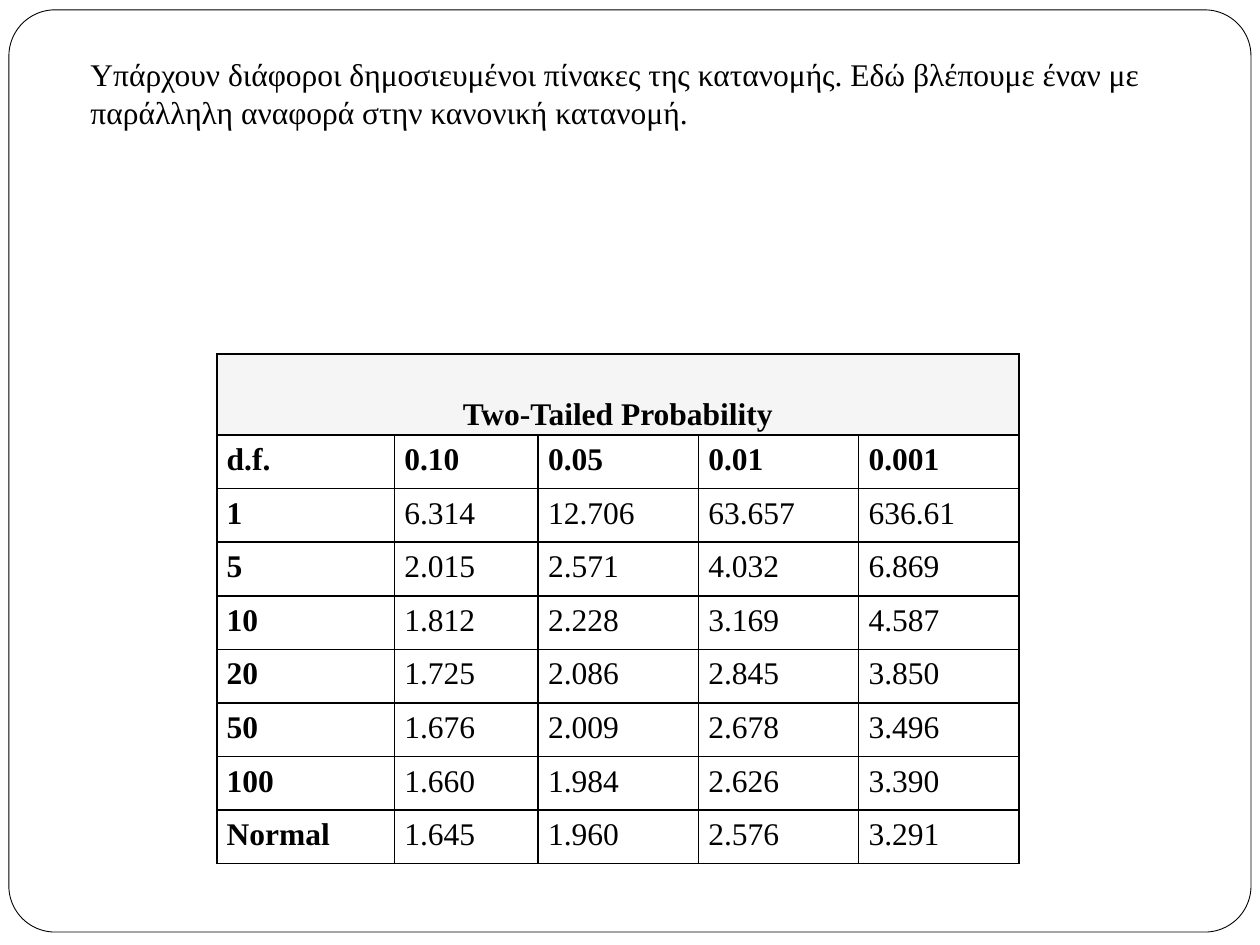
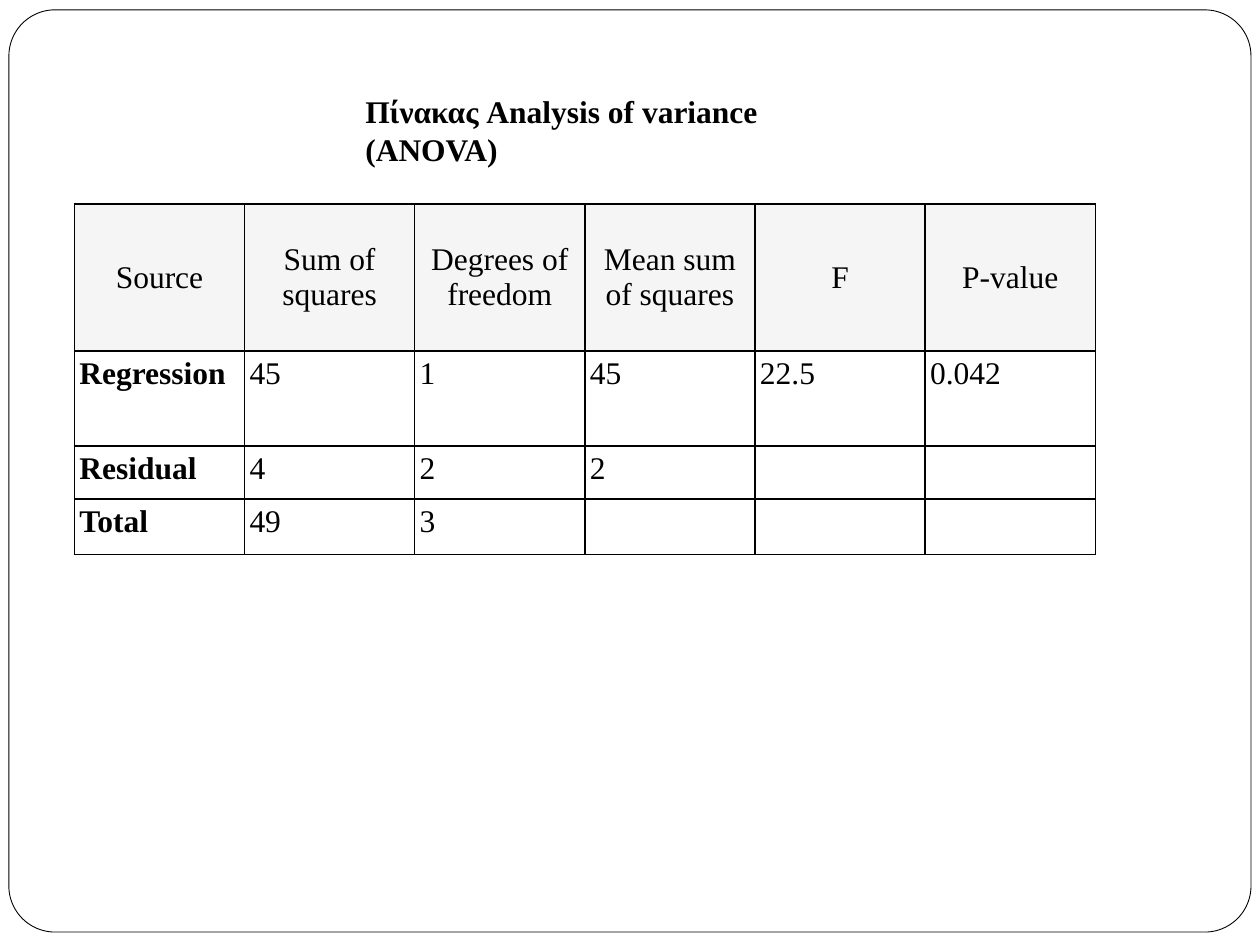
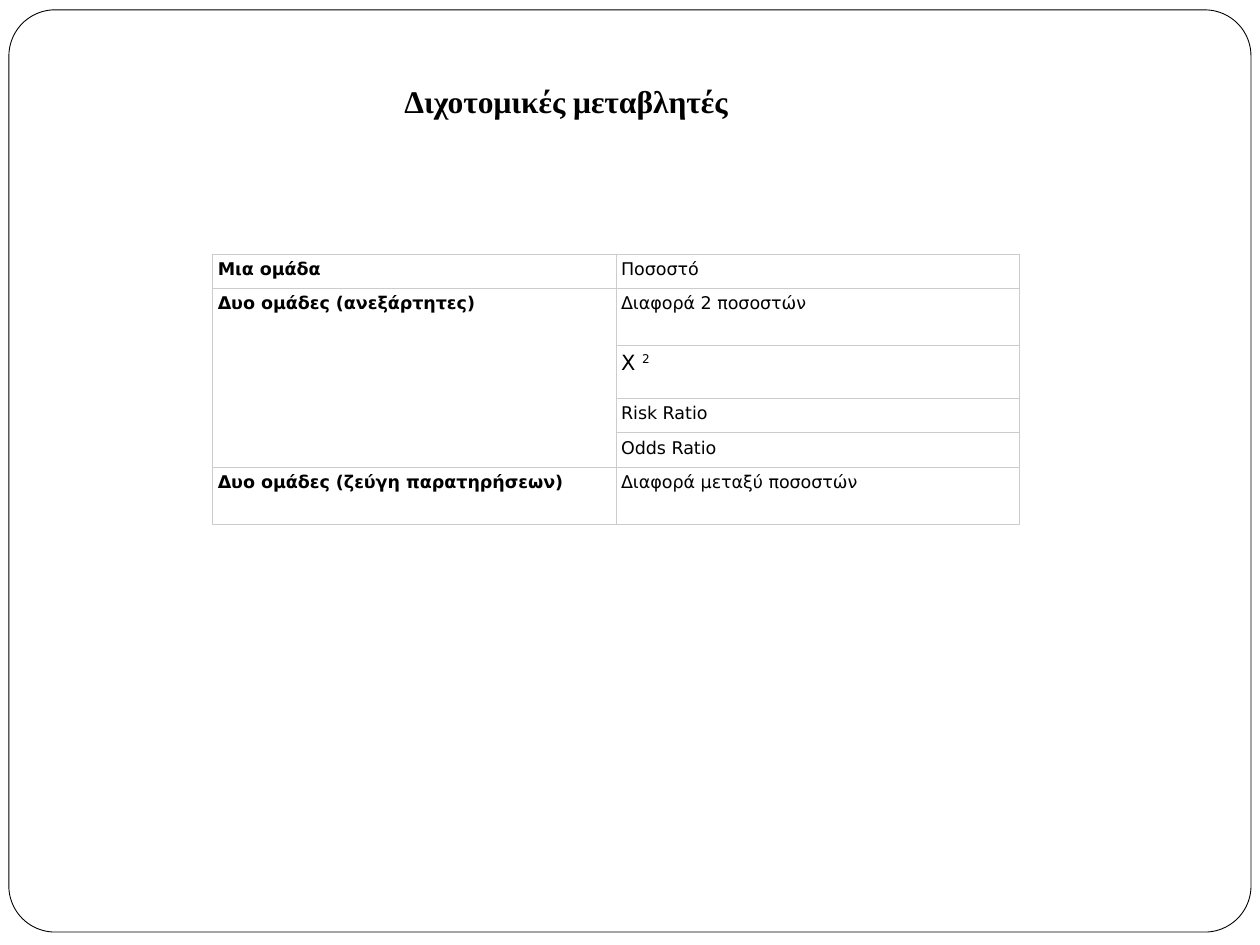
from lxml.etree import SubElement
from pptx import Presentation
from pptx.dml.color import RGBColor
from pptx.enum.shapes import MSO_SHAPE
from pptx.enum.text import MSO_ANCHOR as Anchor, MSO_AUTO_SIZE, PP_ALIGN as Align
from pptx.oxml.ns import qn
from pptx.util import Cm, Pt

COLORS = {"ink": "000000", "paper": "FFFFFF", "header": "F5F5F5", "rule": "CCCCCC"}
SERIF, SANS = "Times New Roman", "DejaVu Sans"
FRAME_BOX = (0.18, 0.2, 25.04, 18.59)
TITLE_ONLY = 5

T_VALUES = [
    ["Two-Tailed Probability", "", "", "", ""],
    ["d.f.", "0.10", "0.05", "0.01", "0.001"],
    ["1", "6.314", "12.706", "63.657", "636.61"],
    ["5", "2.015", "2.571", "4.032", "6.869"],
    ["10", "1.812", "2.228", "3.169", "4.587"],
    ["20", "1.725", "2.086", "2.845", "3.850"],
    ["50", "1.676", "2.009", "2.678", "3.496"],
    ["100", "1.660", "1.984", "2.626", "3.390"],
    ["Normal", "1.645", "1.960", "2.576", "3.291"],
]
ANOVA = [
    ["Source", "Sum of squares", "Degrees of freedom", "Mean sum of squares", "F", "P-value"],
    ["Regression", "45", "1", "45", "22.5", "0.042"],
    ["Residual", "4", "2", "2", "", ""],
    ["Total", "49", "3", "", "", ""],
]
BINARY_METHODS = [
    ["Μια ομάδα", "Ποσοστό"],
    ["Δυο ομάδες (ανεξάρτητες)", "Διαφορά 2 ποσοστών"],
    ["", "Χ ^2"],
    ["", "Risk Ratio"],
    ["", "Odds Ratio"],
    ["Δυο ομάδες (ζεύγη παρατηρήσεων)", "Διαφορά μεταξύ ποσοστών"],
]


def color(key):
    """Return the named colour."""
    return RGBColor.from_string(COLORS[key])


def write_text(frame, text, size=18, font=SERIF, bold=False, align=Align.LEFT):
    """Write one formatted paragraph; what follows ^ is raised."""
    paragraph = frame.paragraphs[0]
    paragraph.alignment = align
    for level, part in enumerate(text.split("^")):
        if not part:
            continue
        run = paragraph.add_run()
        run.text = part
        run.font.size, run.font.name, run.font.bold = Pt(size), font, bold
        run.font.color.rgb = color("ink")
        if level:
            run.font._element.set("baseline", "30000")


def add_master_frame(slide, master, box):
    """Put the rounded page frame behind everything on the master."""
    frame = slide.shapes.add_shape(MSO_SHAPE.ROUNDED_RECTANGLE, *map(Cm, box))
    frame.adjustments[0] = 0.05
    frame.shadow.inherit = False
    frame.fill.solid()
    frame.fill.fore_color.rgb = color("paper")
    frame.line.color.rgb = color("ink")
    frame.line.width = Pt(0.5)
    frame.element.nvSpPr.cNvPr.set("id", "20")
    master.shapes.element.insert(2, frame.element)


def add_titled_slide(prs, title, box, bold=True):
    """Add a slide with its title placed in the box."""
    slide = prs.slides.add_slide(prs.slide_layouts[TITLE_ONLY])
    heading = slide.shapes.title
    heading.left, heading.top, heading.width, heading.height = map(Cm, box)
    frame = heading.text_frame
    frame.word_wrap = True
    frame.auto_size = MSO_AUTO_SIZE.NONE
    frame.vertical_anchor = Anchor.TOP
    write_text(frame, title, bold=bold)
    return slide


def set_borders(cell, key, width):
    """Draw all four borders of a cell."""
    properties = cell._tc.get_or_add_tcPr()
    for side in ("a:lnL", "a:lnR", "a:lnT", "a:lnB"):
        line = SubElement(properties, qn(side), w=str(Pt(width)))
        fill = SubElement(line, qn("a:solidFill"))
        SubElement(fill, qn("a:srgbClr"), val=COLORS[key])


def format_cell(cell, text, fill="paper", border=("ink", 1), margins=(0.1, 0.1),
                anchor=Anchor.TOP, **text_format):
    """Give a cell its borders, fill, margins and text."""
    set_borders(cell, *border)
    cell.fill.solid()
    cell.fill.fore_color.rgb = color(fill)
    cell.margin_left = cell.margin_right = Cm(margins[0])
    cell.margin_top = cell.margin_bottom = Cm(margins[1])
    cell.vertical_anchor = anchor
    write_text(cell.text_frame, text, **text_format)


def add_grid(slide, corner, widths, heights, rows, cell_format):
    """Add a table at the corner; cell_format gives the format by row and column."""
    left, top = corner
    box = map(Cm, (left, top, sum(widths), sum(heights)))
    table = slide.shapes.add_table(len(rows), len(widths), *box).table
    table.first_row = table.horz_banding = False
    for column, width in zip(table.columns, widths):
        column.width = Cm(width)
    for row, height in zip(table.rows, heights):
        row.height = Cm(height)
    for r, values in enumerate(rows):
        for c, value in enumerate(values):
            format_cell(table.cell(r, c), value, **cell_format(r, c))
    return table


def t_format(r, c):
    """Format the t distribution table."""
    if r == 0:
        return dict(fill="header", margins=(0.05, 0.05), anchor=Anchor.BOTTOM,
                    bold=True, align=Align.CENTER)
    return dict(margins=(0.2, 0.15), bold=r == 1 or c == 0)


def anova_format(r, c):
    """Format the analysis of variance table."""
    if r == 0:
        return dict(fill="header", margins=(0.2, 0.2), anchor=Anchor.MIDDLE,
                    align=Align.CENTER)
    return dict(bold=c == 0)


def binary_format(r, c):
    """Format the table of methods, with a larger chi-square."""
    size = 12 if (r, c) == (2, 1) else 10
    return dict(border=("rule", 0.75), size=size, font=SANS, bold=c == 0)


def add_t_slide(prs):
    """Build the slide of t distribution values."""
    slide = add_titled_slide(
        prs,
        "Υπάρχουν διάφοροι δημοσιευμένοι πίνακες της κατανομής. Εδώ βλέπουμε έναν με "
        "παράλληλη αναφορά στην κανονική κατανομή.",
        (1.57, 0.99, 22.43, 1.8), bold=False)
    table = add_grid(slide, (4.37, 7.14), [3.58, 2.9] + [3.23] * 3,
                     [1.63] + [1.08] * 8, T_VALUES, t_format)
    table.cell(0, 0).merge(table.cell(0, 4))
    return slide


def add_anova_slide(prs):
    """Build the analysis of variance slide."""
    slide = add_titled_slide(prs, "Πίνακας Analysis of variance (ANOVA)",
                             (7.11, 1.73, 11.1, 1.02))
    add_grid(slide, (1.5, 4.11), [3.43] * 6, [2.97, 1.91, 1.07, 1.12],
             ANOVA, anova_format)


def add_binary_slide(prs):
    """Build the slide of methods for binary variables."""
    slide = add_titled_slide(prs, "Διχοτομικές μεταβλητές", (7.9, 1.52, 7.8, 1.02))
    table = add_grid(slide, (4.29, 5.13), [8.13] * 2,
                     [0.69, 1.15, 1.07, 0.69, 0.69, 1.15], BINARY_METHODS, binary_format)
    table.cell(1, 0).merge(table.cell(4, 0))


def main():
    """Build and save the presentation."""
    prs = Presentation()
    prs.slide_width, prs.slide_height = Cm(25.4), Cm(19.05)
    first = add_t_slide(prs)
    add_master_frame(first, prs.slide_master, FRAME_BOX)
    add_anova_slide(prs)
    add_binary_slide(prs)
    prs.save("out.pptx")


if __name__ == "__main__":
    main()
